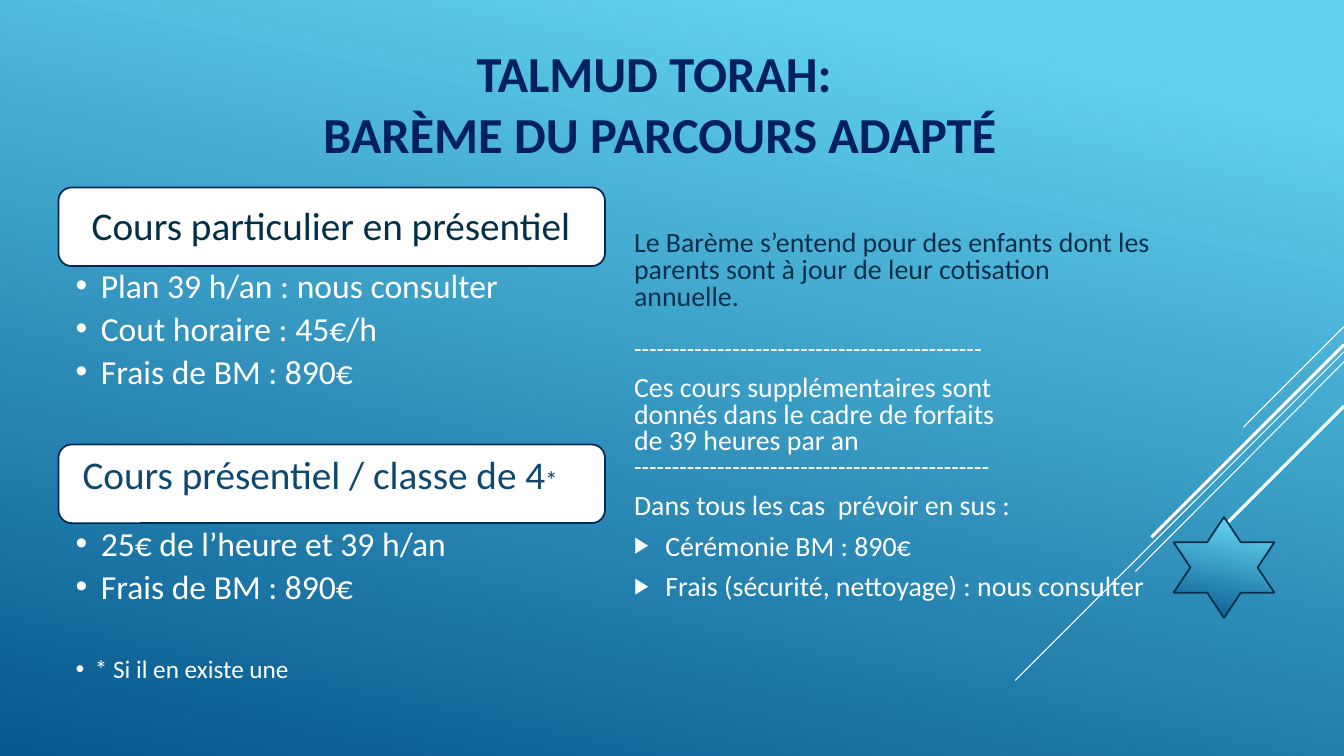
from lxml import etree
from pptx import Presentation
from pptx import util as u
from pptx.dml.color import RGBColor
from pptx.enum import shapes, text
from pptx.oxml.ns import qn

NAVY, WHITE, INK = "002060", "FFFFFF", "023046"
BORDER, SLATE, BLUE = "012957", "09304A", "0F486F"
SKY, DEEP = "62D2EF", "05578D"


def px(length):
    return u.Emu(length * 9144)


def colour(value):
    return RGBColor.from_string(value)


class Slide:
    """Draws styled elements on one page, with lengths in px."""

    font = "Calibri"

    def __init__(self, deck):
        self.page = deck.slides.add_slide(deck.slide_layouts[6])
        self.gradient(self.page.background.fill)

    def gradient(self, fill):
        fill.gradient()
        fill.gradient_angle = 258
        for stop, position, value in zip(fill.gradient_stops, (0.1, 1), (SKY, DEEP)):
            stop.position = position
            stop.color.rgb = colour(value)

    def line(self, x1, y1, x2, y2, weight):
        line = self.page.shapes.add_connector(
            shapes.MSO_CONNECTOR.STRAIGHT, px(x1), px(y1), px(x2), px(y2))
        line.line.color.rgb = colour(WHITE)
        line.line.width = u.Pt(weight)
        etree.SubElement(line._element.spPr, qn("a:effectLst"))

    def shape(self, kind, left, top, width, height, border, fill=None):
        shape = self.page.shapes.add_shape(kind, px(left), px(top), px(width), px(height))
        shape.shadow.inherit = False
        if fill:
            shape.fill.solid()
            shape.fill.fore_color.rgb = colour(fill)
        else:
            self.gradient(shape.fill)
        shape.line.color.rgb = colour(border)
        shape.line.width = u.Pt(1.25)

    def box(self, left, top, width, height, insets=(10, 5, 10, 5), middle=False):
        box = self.page.shapes.add_textbox(px(left), px(top), px(width), px(height))
        frame = box.text_frame
        frame.word_wrap = True
        frame.margin_left, frame.margin_top, frame.margin_right, frame.margin_bottom = map(px, insets)
        frame.vertical_anchor = text.MSO_ANCHOR.MIDDLE if middle else text.MSO_ANCHOR.TOP
        return frame

    def para(self, frame, spans, spacing=0.9, before=0, align=None, bullet=None, indent=0, scale=100):
        first = frame.paragraphs[0]
        para = frame.add_paragraph() if first.runs else first
        para.line_spacing = spacing
        para.space_before = u.Pt(before)
        para.alignment = align
        for words, size, value, bold in spans:
            for number, row in enumerate(words.split("\n")):
                if number:
                    para.add_line_break()
                span = para.add_run()
                span.text = row
                span.font.name = self.font
                span.font.size = u.Pt(size)
                span.font.bold = bold
                span.font.color.rgb = colour(value)
        if bullet:
            self.bullet(para, bullet, indent, scale)

    def bullet(self, para, mark, indent, scale):
        props = para._p.get_or_add_pPr()
        props.set("marL", str(px(indent)))
        props.set("indent", str(-px(indent)))
        tint = etree.SubElement(props, qn("a:buClr"))
        etree.SubElement(tint, qn("a:srgbClr"), val=WHITE)
        etree.SubElement(props, qn("a:buSzPct"), val=str(scale * 1000))
        etree.SubElement(props, qn("a:buFont"), typeface="Arial")
        etree.SubElement(props, qn("a:buChar"), char=mark)

    def heading(self, top, left, text_top, spans):
        self.shape(shapes.MSO_SHAPE.ROUNDED_RECTANGLE, 58, top, 542, 78, BORDER, WHITE)
        frame = self.box(left, text_top, 534, 72, (12, 12, 12, 12), middle=True)
        self.para(frame, spans)

    def bullets(self, top, height, items):
        frame = self.box(58, top, 542, height, (17, 3, 19, 3))
        for number, words in enumerate(items):
            self.para(frame, [(words, 24, WHITE, False)], before=4.8 if number else 0,
                      bullet="•", indent=25)
        return frame


def main():
    deck = Presentation()
    deck.slide_width, deck.slide_height = px(1333), px(750)
    slide = Slide(deck)

    for x1, y1, x2, y2, weight in [
        (1333, 324, 1233, 424, 0.75),
        (1333, 349, 1007, 675, 0.75),
        (1333, 359, 1126, 567, 0.75),
        (1333, 342, 1142, 533, 2.25),
        (1333, 403, 1194, 542, 2.25),
    ]:
        slide.line(x1, y1, x2, y2, weight)
    slide.shape(shapes.MSO_SHAPE.STAR_6_POINT, 1164, 513, 100, 100, INK)

    title = slide.box(7, 37, 1295, 131)
    for words in ("TALMUD TORAH: ", "BARÈME DU PARCOURS ADAPTÉ"):
        slide.para(title, [(words, 36, NAVY, True)], spacing=1.0, align=text.PP_ALIGN.CENTER)

    notes = slide.box(619, 214, 542, 399, middle=True)
    slide.para(notes, [("Le Barème s’entend pour des enfants dont les parents sont à jour "
                        "de leur cotisation annuelle.", 19.9, SLATE, False)], spacing=0.8)
    slide.para(notes, [("-" * 46, 17.6, WHITE, False)], spacing=0.8, before=19)
    slide.para(notes, [("Ces cours supplémentaires sont\ndonnés dans le cadre de forfaits\n"
                        "de 39 heures par an\n", 19.9, WHITE, False),
                       ("-" * 47, 17.6, WHITE, False)], spacing=0.8, before=10)
    slide.para(notes, [("Dans tous les cas  prévoir en sus :", 19.9, WHITE, False)],
               spacing=0.8, before=10, align=text.PP_ALIGN.JUSTIFY)
    for words in ("Cérémonie BM : 890€", "Frais (sécurité, nettoyage) : nous consulter"):
        slide.para(notes, [(words, 19.9, WHITE, False)], spacing=0.8, before=10,
                   bullet="▶", indent=31, scale=80)

    slide.heading(186, 79, 190, [("Cours particulier en présentiel", 28, INK, False)])
    slide.bullets(264, 177, ["Plan 39 h/an : nous consulter", "Cout horaire : 45€/h",
                             "Frais de BM : 890€"])
    slide.heading(441, 70, 437, [("Cours présentiel / classe de 4", 28, BLUE, False),
                                 ("*", 18, BLUE, False)])
    group_rates = slide.bullets(520, 169, ["25€ de l’heure et 39 h/an", "Frais de BM : 890€"])
    slide.para(group_rates, [("* Si il en existe une", 18, WHITE, False)], before=36,
               bullet="•", indent=19)

    deck.save("out.pptx")


if __name__ == "__main__":
    main()
